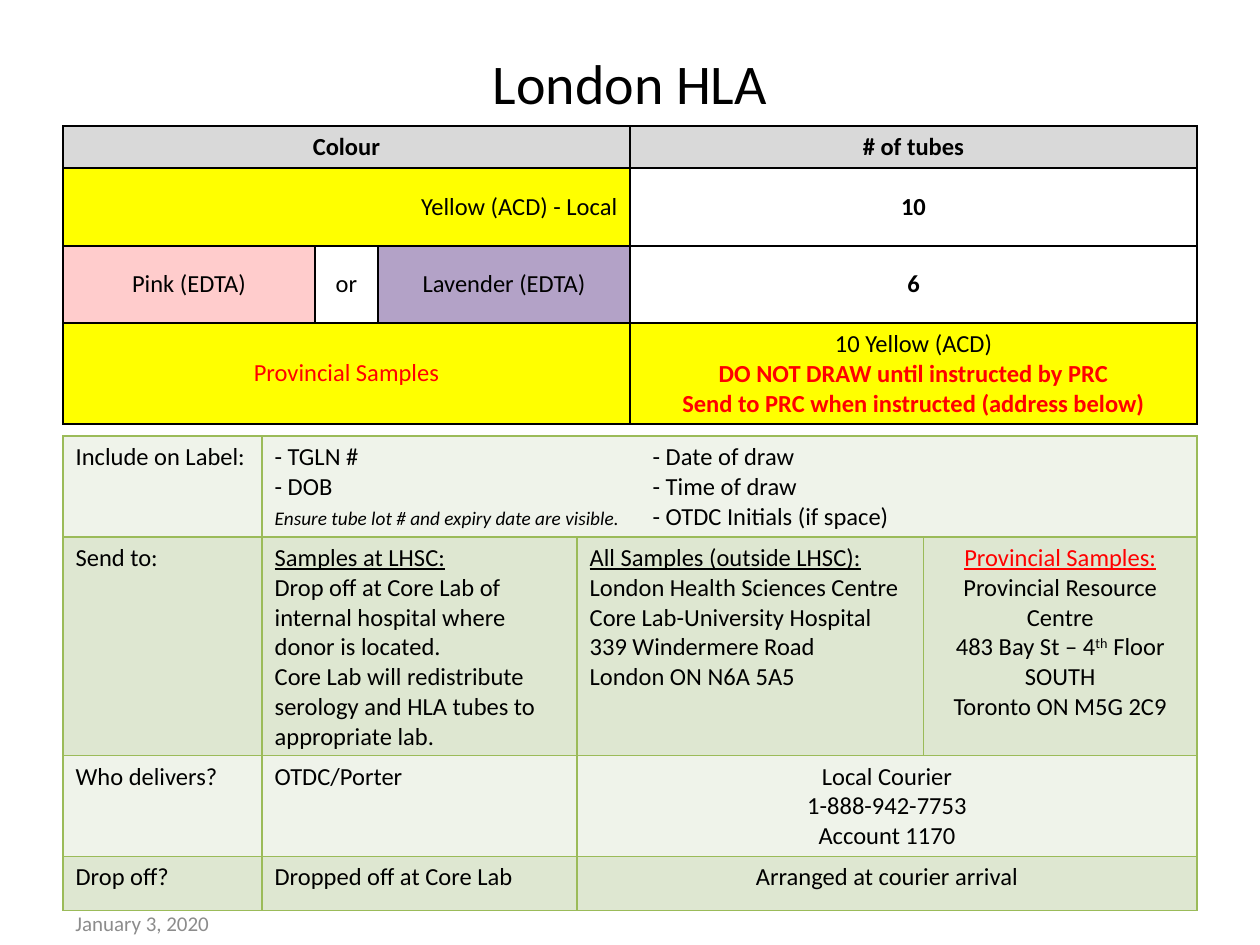
from itertools import product
from lxml.etree import SubElement as Sub
from pptx import Presentation
from pptx.dml.color import RGBColor as Rgb
from pptx.enum.text import MSO_ANCHOR as Anc, PP_ALIGN as Al
from pptx.oxml.ns import qn
from pptx.util import Inches, Pt

HUE = {
    "black": "000000", "red": "FF0000", "grey": "8C8C8C", "head": "D9D9D9",
    "yellow": "FFFF00", "pink": "FFCCCC", "lilac": "B3A2C7",
    "green": "9BBB59", "pale": "EFF3EA", "sage": "DEE7D1",
}
MID = {"align": Al.CENTER, "anchor": Anc.MIDDLE}
TOP = {"align": Al.CENTER}
BOLD = {"bold": True}
RED = {"hue": "red"}
LINE = {"under": True}


def write(para, text, size=14, hue="black", bold=False, slant=False, under=False, base=0):
    run = para.add_run()
    run.text = text
    font = run.font
    font.name, font.size = "Calibri", Pt(size)
    font.bold, font.italic, font.underline = bold, slant, under
    font.color.rgb = Rgb.from_string(HUE[hue])
    if base:
        run._r.get_or_add_rPr().set("baseline", str(base * 1000))


def mark(para, stop=None, dash=False):
    props = para._p.get_or_add_pPr()
    if dash:
        props.set("marL", "0")
        props.set("indent", "0")
        Sub(props, qn("a:buFont"), typeface="Calibri")
        Sub(props, qn("a:buChar"), char="-")
    if stop:
        tabs = Sub(props, qn("a:tabLst"))
        Sub(tabs, qn("a:tab"), pos=str(Inches(stop)), algn="l")


def edge(cell, hue):
    props = cell._tc.get_or_add_tcPr()
    for side in "LRTB":
        line = Sub(props, qn(f"a:ln{side}"), w=str(Pt(1)))
        Sub(Sub(line, qn("a:solidFill")), qn("a:srgbClr"), val=HUE[hue])


def fill_cell(cell, lines, fill=None, align=Al.LEFT, anchor=Anc.TOP):
    if fill:
        cell.fill.solid()
        cell.fill.fore_color.rgb = Rgb.from_string(HUE[fill])
    else:
        cell.fill.background()
    cell.vertical_anchor = anchor
    frame = cell.text_frame
    for i, line in enumerate(lines):
        para = frame.add_paragraph() if i else frame.paragraphs[0]
        para.alignment = align
        for part in line if isinstance(line, list) else [line]:
            text, form = part if isinstance(part, tuple) else (part, {})
            write(para, text, **form)


def add_grid(slide, box, cols, rows, hue):
    grid = slide.shapes.add_table(len(rows), len(cols), *map(Inches, box)).table
    grid.first_row = grid.horz_banding = False
    for col, wide in zip(grid.columns, cols):
        col.width = Inches(wide)
    for row, high in zip(grid.rows, rows):
        row.height = Inches(high)
    for r, c in product(range(len(rows)), range(len(cols))):
        edge(grid.cell(r, c), hue)
    return grid


def fill_row(grid, r, cells):
    c = 0
    for span, lines, form in cells:
        cell = grid.cell(r, c)
        if span > 1:
            cell.merge(grid.cell(r, c + span - 1))
        fill_cell(cell, lines, **form)
        c += span


def add_tubes(slide, box):
    grid = add_grid(slide, box, [2, 0.5, 2, 4.5], [0.31, 0.62, 0.61, 0.68], "black")
    head = {"fill": "head", **TOP}
    gold = {"fill": "yellow", **MID}
    loud = {**RED, **BOLD}
    rows = [
        [(3, [("Colour", BOLD)], head), (1, [("# of tubes", BOLD)], head)],
        [(3, ["Yellow (ACD) - Local"], {**gold, "align": Al.RIGHT}),
         (1, [("10", BOLD)], MID)],
        [(1, ["Pink (EDTA)"], {"fill": "pink", **MID}),
         (1, ["or"], MID),
         (1, ["Lavender (EDTA)"], {"fill": "lilac", **MID}),
         (1, [("6", BOLD)], MID)],
        [(3, [("Provincial Samples", RED)], gold),
         (1, ["10 Yellow (ACD)",
              ("DO NOT DRAW until instructed by PRC", loud),
              ("Send to PRC when instructed (address below)", loud)], gold)],
    ]
    for r, cells in enumerate(rows):
        fill_row(grid, r, cells)


def add_guide(slide, box):
    grid = add_grid(slide, box, [1.58, 2.5, 2.75, 2.17], [0.75, 1.11, 0.8, 0.43], "green")
    rows = [
        [(1, ["Include on Label:"], {}),
         (3, [" TGLN #\t- Date of draw",
              " DOB\t- Time of draw",
              [("Ensure tube lot # and expiry date are visible.", {"size": 11, "slant": True}),
               "\t- OTDC Initials (if space)"]], {})],
        [(1, ["Send to:"], {}),
         (1, [("Samples at LHSC:", LINE),
              "Drop off at Core Lab of internal hospital where donor is located.",
              "Core Lab will redistribute serology and HLA tubes to appropriate lab."], {}),
         (1, [("All Samples (outside LHSC):", LINE),
              "London Health Sciences Centre",
              "Core Lab-University Hospital",
              "339 Windermere Road",
              "London ON N6A 5A5"], {}),
         (1, [("Provincial Samples:", {**RED, **LINE}),
              "Provincial Resource Centre",
              ["483 Bay St – 4", ("th", {"base": 30}), " Floor SOUTH"],
              "Toronto ON M5G 2C9"], TOP)],
        [(1, ["Who delivers?"], {}),
         (1, ["OTDC/Porter"], {}),
         (2, ["Local Courier", "1-888-942-7753", "Account 1170"], TOP)],
        [(1, ["Drop off?"], {}),
         (1, ["Dropped off at Core Lab"], {}),
         (2, ["Arranged at courier arrival"], TOP)],
    ]
    for r, cells in enumerate(rows):
        fill = "sage" if r % 2 else "pale"
        fill_row(grid, r, [(span, lines, {"fill": fill, **form}) for span, lines, form in cells])
    for i, para in enumerate(grid.cell(0, 1).text_frame.paragraphs):
        mark(para, stop=3, dash=i < 2)


def add_label(slide, box, text, align=Al.LEFT, anchor=Anc.MIDDLE, inset=0.05, **form):
    frame = slide.shapes.add_textbox(*map(Inches, box)).text_frame
    frame.word_wrap = True
    frame.vertical_anchor = anchor
    frame.margin_top = Inches(inset)
    para = frame.paragraphs[0]
    para.alignment = align
    write(para, text, **form)


def main():
    deck = Presentation()
    deck.slide_width, deck.slide_height = Inches(10), Inches(7.5)
    slide = deck.slides.add_slide(deck.slide_layouts[6])
    add_label(slide, (0.5, 0.3, 9, 0.7), "London HLA", align=Al.CENTER, size=32)
    add_tubes(slide, (0.5, 1, 9, 2.37))
    add_guide(slide, (0.5, 3.46, 9, 3.77))
    add_label(slide, (0.5, 7.08, 2.33, 0.27), "January 3, 2020",
              anchor=Anc.TOP, inset=0.15, size=12, hue="grey")
    deck.save("out.pptx")


if __name__ == "__main__":
    main()
